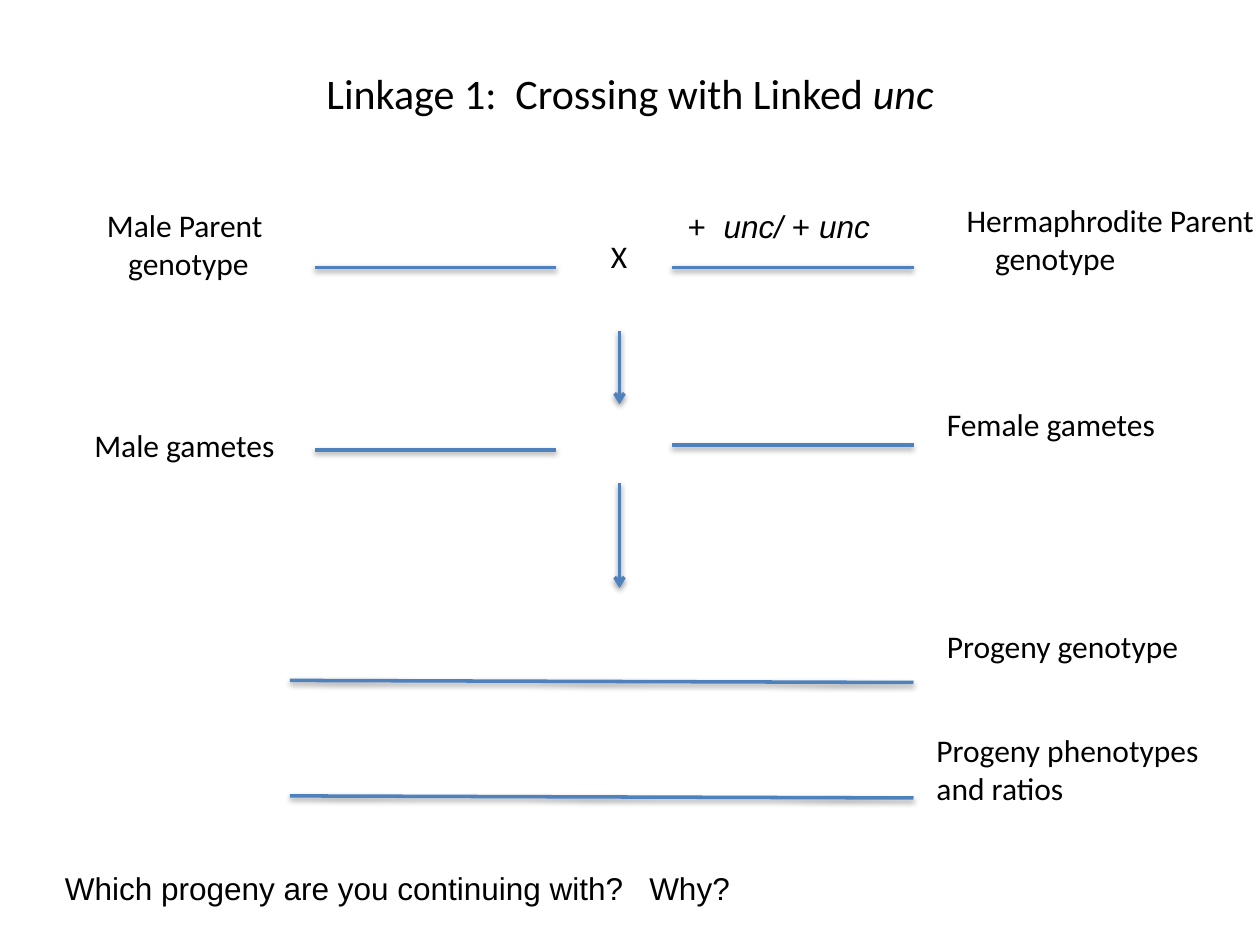
from dataclasses import dataclass

from lxml.etree import SubElement
from pptx import Presentation
from pptx.dml.color import RGBColor
from pptx.enum.shapes import MSO_CONNECTOR
from pptx.enum.text import MSO_ANCHOR, MSO_AUTO_SIZE, PP_ALIGN
from pptx.oxml.ns import qn
from pptx.util import Pt

BLACK = RGBColor(0x00, 0x00, 0x00)
BLUE = RGBColor(0x4F, 0x81, 0xBD)
BODY_SIZE = 18
TITLE_SIZE = 24

# Shared horizontal positions, in points
MALE_LEFT, MALE_RIGHT = 180, 318
FEMALE_LEFT, FEMALE_RIGHT = 384, 522
PROGENY_LEFT = 165.6
CENTER = 354


@dataclass(frozen=True)
class Run:
    text: str
    italic: bool = False


@dataclass(frozen=True)
class Label:
    left: float
    top: float
    width: float
    height: float
    lines: tuple[tuple[Run, ...], ...]
    font: str = "Calibri"
    second_indent: float = 0


@dataclass(frozen=True)
class Rule:
    start: tuple[float, float]
    end: tuple[float, float]
    arrow: bool = False


LABELS = (
    # Parents
    Label(545.3, 111.2, 180, 51, ((Run("Hermaphrodite Parent"),), (Run("genotype"),)),
          second_indent=16.2),
    Label(54, 114.1, 104.4, 51, ((Run("Male Parent"),), (Run("genotype"),)),
          second_indent=12.2),
    Label(342, 131.8, 23.8, 29, ((Run("X"),),)),
    Label(385.9, 114.9, 130, 29,
          ((Run("+  "), Run("unc/ ", True), Run("+ "), Run("unc", True)),), "Arial"),
    # Gametes
    Label(46.8, 239.8, 118.8, 29, ((Run("Male gametes"),),)),
    Label(534, 228, 134.6, 29, ((Run("Female gametes"),),)),
    # Progeny
    Label(534, 355, 148.3, 29, ((Run("Progeny genotype"),),)),
    Label(528, 414, 166.3, 51, ((Run("Progeny phenotypes"),), (Run("and ratios"),))),
    # Question
    Label(30, 493.2, 398.2, 29,
          ((Run("Which progeny are you continuing with?   Why?"),),), "Arial"),
)

RULES = (
    # Parent blanks and first step
    Rule((MALE_LEFT, 152.8), (MALE_RIGHT, 152.8)),
    Rule((FEMALE_LEFT, 152.8), (FEMALE_RIGHT, 152.8)),
    Rule((CENTER, 189), (CENTER, 231), arrow=True),
    # Gamete blanks and second step
    Rule((MALE_LEFT, 257.2), (MALE_RIGHT, 257.2)),
    Rule((FEMALE_LEFT, 254.4), (FEMALE_RIGHT, 254.4)),
    Rule((CENTER, 276), (CENTER, 336), arrow=True),
    # Progeny blanks
    Rule((PROGENY_LEFT, 388.8), (FEMALE_RIGHT, 390)),
    Rule((PROGENY_LEFT, 454.8), (FEMALE_RIGHT, 456)),
)


def add_runs(paragraph, runs: tuple[Run, ...], font: str, size: float) -> None:
    for part in runs:
        run = paragraph.add_run()
        run.text = part.text
        run.font.name = font
        run.font.size = Pt(size)
        run.font.italic = part.italic
        run.font.color.rgb = BLACK


def add_label(slide, label: Label) -> None:
    shape = slide.shapes.add_textbox(
        Pt(label.left), Pt(label.top), Pt(label.width), Pt(label.height))
    frame = shape.text_frame
    frame.word_wrap = False
    frame.auto_size = MSO_AUTO_SIZE.SHAPE_TO_FIT_TEXT
    for index, runs in enumerate(label.lines):
        paragraph = frame.add_paragraph() if index else frame.paragraphs[0]
        paragraph.alignment = PP_ALIGN.LEFT
        if index and label.second_indent:
            properties = paragraph._p.get_or_add_pPr()
            properties.set("marL", str(Pt(label.second_indent)))
            properties.set("indent", "0")
        add_runs(paragraph, runs, label.font, BODY_SIZE)


def add_rule(slide, rule: Rule) -> None:
    connector = slide.shapes.add_connector(
        MSO_CONNECTOR.STRAIGHT, *(Pt(value) for value in rule.start + rule.end))
    connector.line.color.rgb = BLUE
    connector.line.width = Pt(2)
    properties = connector._element.spPr
    if rule.arrow:
        SubElement(properties.find(qn("a:ln")), qn("a:tailEnd"), type="arrow")
    # Soft shadow straight below the line
    effects = SubElement(properties, qn("a:effectLst"))
    shadow = SubElement(effects, qn("a:outerShdw"), blurRad=str(Pt(3.1)),
                        dist=str(Pt(1.6)), dir="5400000", rotWithShape="0")
    color = SubElement(shadow, qn("a:srgbClr"), val=str(BLACK))
    SubElement(color, qn("a:alpha"), val="38000")


def add_title(slide) -> None:
    title = slide.shapes.title
    title.left, title.top, title.width, title.height = Pt(36), Pt(21.6), Pt(648), Pt(62.6)
    title.text_frame.vertical_anchor = MSO_ANCHOR.MIDDLE
    paragraph = title.text_frame.paragraphs[0]
    paragraph.alignment = PP_ALIGN.CENTER
    add_runs(paragraph, (Run("Linkage 1:  Crossing with Linked "), Run("unc", True)),
             "Calibri", TITLE_SIZE)


def main() -> None:
    presentation = Presentation()
    presentation.slide_width, presentation.slide_height = Pt(720), Pt(540)
    slide = presentation.slides.add_slide(presentation.slide_layouts[5])
    add_title(slide)
    for rule in RULES:
        add_rule(slide, rule)
    for label in LABELS:
        add_label(slide, label)
    presentation.save("out.pptx")


if __name__ == "__main__":
    main()
